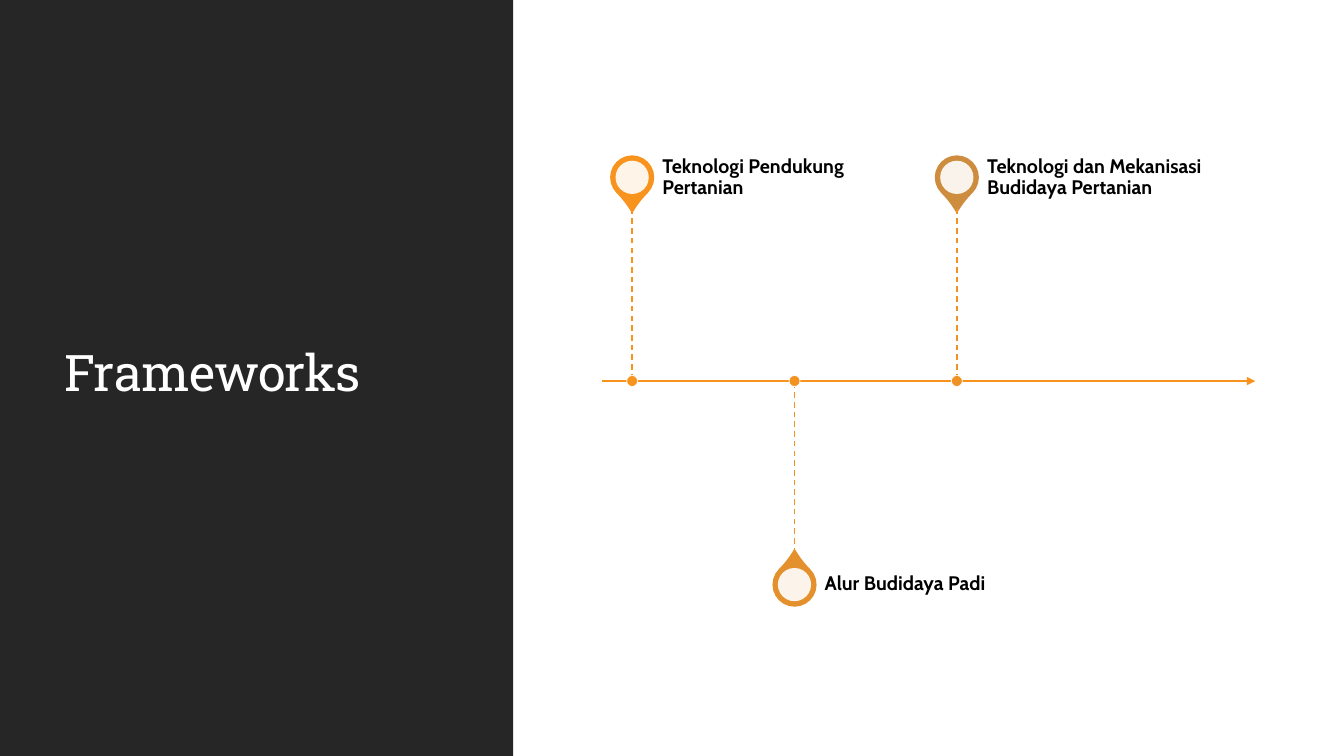
import pptx
import pptx.dml.color
import pptx.enum.dml
import pptx.enum.shapes
import pptx.enum.text
import pptx.oxml.ns
import pptx.util
from lxml import etree

Inches = pptx.util.Inches
Pt = pptx.util.Pt
SHAPE = pptx.enum.shapes.MSO_SHAPE
qn = pptx.oxml.ns.qn

TITLE = "Frameworks"
ORANGE = "F8931D"
MILESTONES = [
    ("Teknologi Pendukung Pertanian", "F8931D", "F8931D"),
    ("Alur Budidaya Padi", "E3902D", "F39221"),
    ("Teknologi dan Mekanisasi Budidaya Pertanian", "CE8D3E", "EE9225"),
]
AXIS_Y, AXIS_START, AXIS_END = 3.78, 5.97, 12.45
FIRST_X, STEP_X = 6.27, 1.61
PIN_REACH, STEM_REACH = 2.02, 1.71
PIN, HOLE, DOT = 0.42, 0.33, 0.11
LABEL_GAP, LABEL_W, LABEL_H = 0.3, 2.66, 0.6


def rgb(value):
    return pptx.dml.color.RGBColor.from_string(value)


def add_shape(slide, kind, x, y, w, h, fill, line=None, width=0):
    sp = slide.shapes.add_shape(kind, Inches(x), Inches(y), Inches(w), Inches(h))
    sp.shadow.inherit = False
    sp.fill.solid()
    sp.fill.fore_color.rgb = rgb(fill)
    if line:
        sp.line.color.rgb = rgb(line)
        sp.line.width = Pt(width)
    else:
        sp.line.fill.background()
    return sp


def add_centred(slide, kind, x, y, size, fill, line=None, width=0):
    return add_shape(slide, kind, x - size / 2, y - size / 2, size, size, fill, line, width)


def add_line(slide, x1, y1, x2, y2, color, width):
    line = slide.shapes.add_connector(
        pptx.enum.shapes.MSO_CONNECTOR.STRAIGHT,
        Inches(x1), Inches(y1), Inches(x2), Inches(y2))
    line.line.color.rgb = rgb(color)
    line.line.width = Pt(width)
    etree.SubElement(line._element.spPr, qn("a:effectLst"))
    return line


def add_text(slide, text, x, y, w, h, font, size, color, bold=False):
    sp = slide.shapes.add_textbox(Inches(x), Inches(y), Inches(w), Inches(h))
    tf = sp.text_frame
    tf.word_wrap = True
    tf.vertical_anchor = pptx.enum.text.MSO_ANCHOR.MIDDLE
    p = tf.paragraphs[0]
    p.text = text
    p.line_spacing = 0.9
    p.font.name = font
    p.font.size = Pt(size)
    p.font.bold = bold
    p.font.color.rgb = rgb(color)
    return tf


def add_milestone(slide, index, text, pin_color, stem_color):
    x = FIRST_X + index * STEP_X
    side = 1 if index % 2 else -1
    pin_y = AXIS_Y + side * PIN_REACH

    pin = add_centred(slide, SHAPE.TEAR, x, pin_y, PIN, pin_color, pin_color, 1.25)
    pin.adjustments[0] = 1.15
    pin.rotation = 315 if side > 0 else 135
    hole = add_centred(slide, SHAPE.OVAL, x, pin_y, HOLE, "FFFFFF")
    color = hole.fill._xPr.find(qn("a:solidFill"))[0]
    etree.SubElement(color, qn("a:alpha"), val="90000")

    tf = add_text(slide, text, x + LABEL_GAP, pin_y - LABEL_H / 2, LABEL_W, LABEL_H,
                  "Cabin", 14, "000000", True)
    tf.margin_left = tf.margin_top = tf.margin_bottom = 0

    stem = add_line(slide, x, AXIS_Y + side * STEM_REACH, x, AXIS_Y, stem_color, 1)
    stem.line.dash_style = pptx.enum.dml.MSO_LINE.DASH
    add_centred(slide, SHAPE.OVAL, x, AXIS_Y, DOT, stem_color, "FFFFFF", 0.5)


def main():
    prs = pptx.Presentation()
    prs.slide_width, prs.slide_height = Inches(13.33), Inches(7.5)
    slide = prs.slides.add_slide(prs.slide_layouts[6])

    add_shape(slide, SHAPE.RECTANGLE, 0, 0, 5.09, 7.5, "262626")
    axis = add_line(slide, AXIS_START, AXIS_Y, AXIS_END, AXIS_Y, ORANGE, 1.5)
    etree.SubElement(axis.line._get_or_add_ln(), qn("a:tailEnd"), type="triangle")
    for index, milestone in enumerate(MILESTONES):
        add_milestone(slide, index, *milestone)

    tf = add_text(slide, TITLE, 0.54, 0.57, 3.37, 6.31, "Roboto Slab", 36, "FFFFFF")
    tf.paragraphs[0].runs[0].font._element.set("spc", "-50")
    prs.save("out.pptx")


if __name__ == "__main__":
    main()
